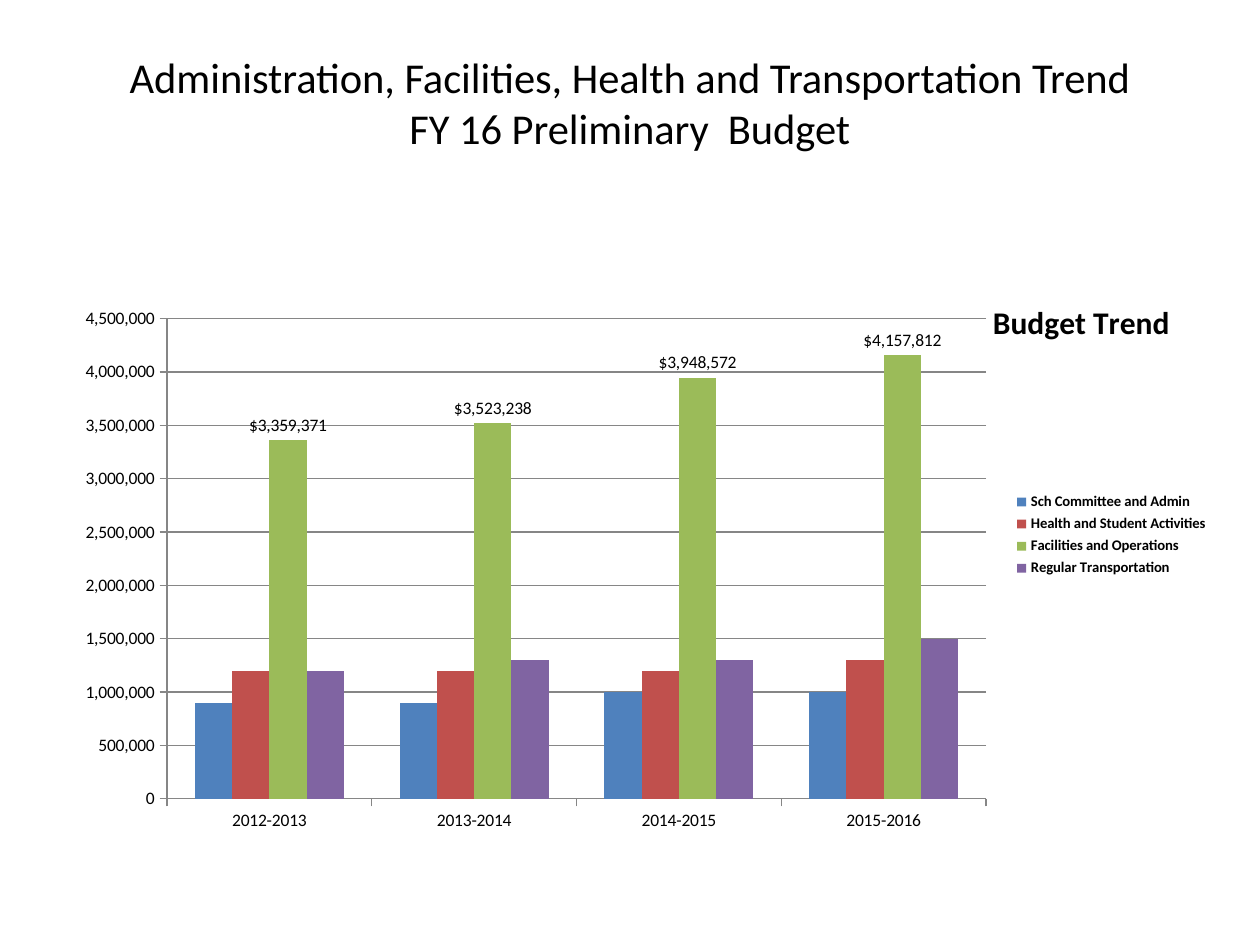
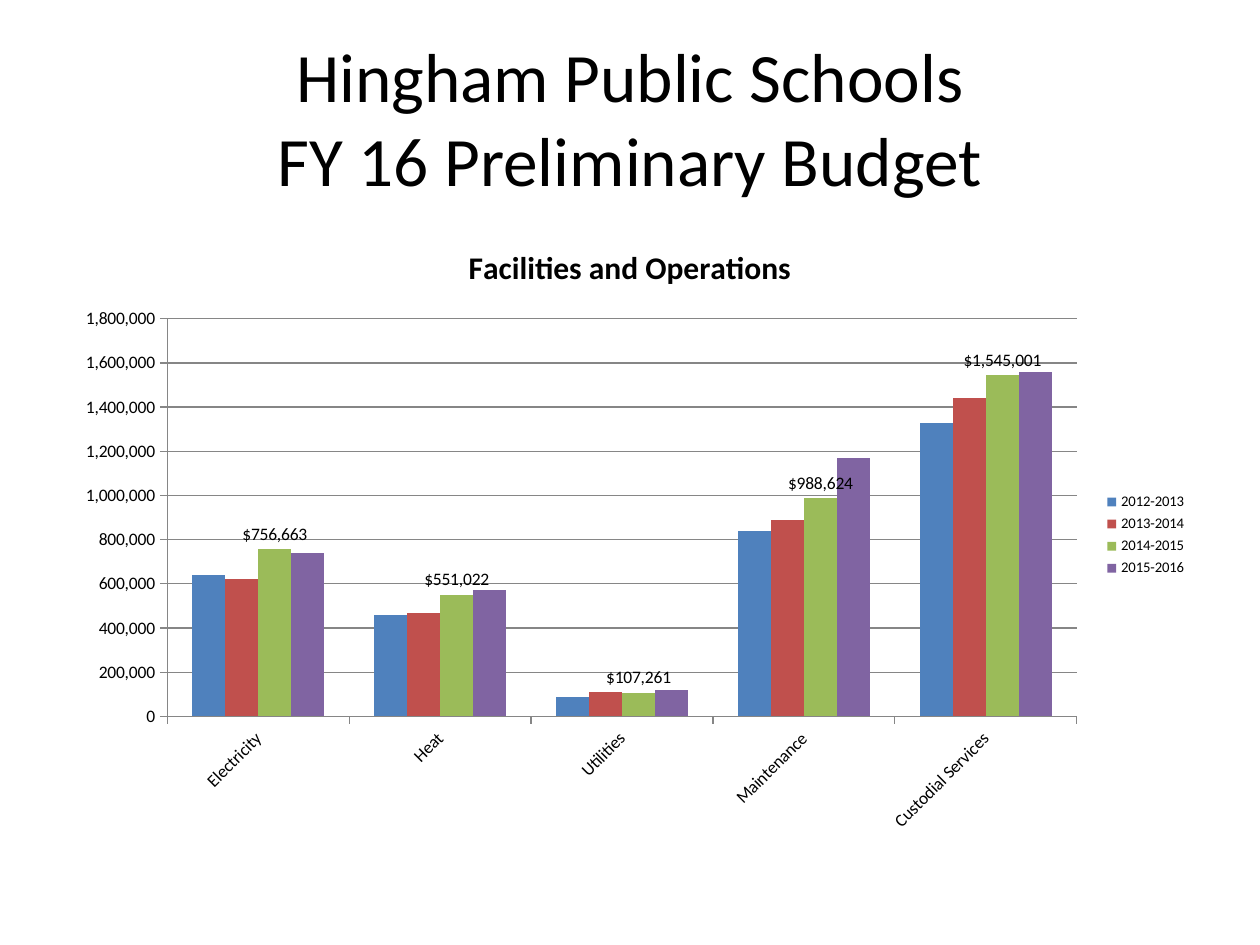
from lxml import etree
from pptx import Presentation
from pptx import util as u
from pptx.chart.data import CategoryChartData
from pptx.dml.color import RGBColor
from pptx.enum import chart as charts, text
from pptx.oxml import ns

FONT = "Calibri"
COLORS = {
    "text": "000000",
    "background": "FFFFFF",
    "line": "868686",
    "blue": "4F81BD",
    "red": "C0504D",
    "green": "9BBB59",
    "purple": "8064A2",
}
SERIES_COLORS = ("blue", "red", "green", "purple")
LABELLED_SERIES = 2
YEARS = ("2012-2013", "2013-2014", "2014-2015", "2015-2016")
TITLE_BOX = (0.05, 0.04, 0.9, 0.167)
CHART_TOP, CHART_HEIGHT = 0.233, 0.66

TREND = {
    "title": "Administration, Facilities, Health and Transportation Trend\vFY 16 Preliminary  Budget",
    "title_size": 24.3,
    "title_bottom": 0.29,
    "chart_width": 0.917,
    "chart_title": "Budget Trend",
    "chart_title_at": (0.8, 0.12),
    "categories": YEARS,
    "series": {
        "Sch Committee and Admin": (900000, 900000, 1000000, 1000000),
        "Health and Student Activities": (1200000, 1200000, 1200000, 1300000),
        "Facilities and Operations": (3359371, 3523238, 3948572, 4157812),
        "Regular Transportation": (1200000, 1300000, 1300000, 1500000),
    },
    "scale": (4500000, 500000),
    "plot_box": (0.09, 0.158, 0.709, 0.77),
    "legend_box": (0.82, 0.43, 0.175, 0.15),
    "legend_bold": True,
    "label_angle": 0,
}
FACILITIES = {
    "title": "Hingham Public Schools\vFY 16 Preliminary Budget",
    "title_size": 39.6,
    "title_bottom": 0.05,
    "chart_width": 0.9,
    "chart_title": "Facilities and Operations",
    "chart_title_at": None,
    "categories": ("Electricity", "Heat", "Utilities", "Maintenance", "Custodial Services"),
    "series": dict(zip(YEARS, (
        (640000, 460000, 90000, 840000, 1330000),
        (620000, 470000, 110000, 890000, 1440000),
        (756663, 551022, 107261, 988624, 1545001),
        (740000, 570000, 120000, 1170000, 1560000),
    ))),
    "scale": (1800000, 200000),
    "plot_box": (0.092, 0.158, 0.802, 0.638),
    "legend_box": (0.915, 0.43, 0.08, 0.15),
    "legend_bold": False,
    "label_angle": -45,
}


def color(name):
    return RGBColor.from_string(COLORS[name])


def set_font(font, size, bold=False):
    font.name = FONT
    font.size = u.Pt(size)
    font.bold = bold
    font.color.rgb = color("text")


def set_line(line):
    line.color.rgb = color("line")
    line.width = u.Pt(0.75)


def share_of_slide(presentation, box):
    width, height = presentation.slide_width, presentation.slide_height
    left, top, across, down = box
    return [int(length) for length in (left * width, top * height, across * width, down * height)]


def set_layout(element, index, box, inner=False):
    for layout in element.findall(ns.qn("c:layout")):
        element.remove(layout)
    layout = etree.Element(ns.qn("c:layout"))
    manual = etree.SubElement(layout, ns.qn("c:manualLayout"))
    settings = [("layoutTarget", "inner")] if inner else []
    settings += [("xMode", "edge"), ("yMode", "edge")]
    settings += zip("xywh", box)
    for name, value in settings:
        etree.SubElement(manual, ns.qn("c:" + name)).set("val", str(value))
    element.insert(index, layout)


def add_title(slide, box, content):
    frame = slide.shapes.add_textbox(*box).text_frame
    frame.word_wrap = True
    frame.vertical_anchor = text.MSO_ANCHOR.MIDDLE
    frame.margin_bottom = u.Inches(content["title_bottom"])
    paragraph = frame.paragraphs[0]
    paragraph.text = content["title"]
    paragraph.alignment = text.PP_ALIGN.CENTER
    set_font(paragraph.font, content["title_size"])


def style_chart_title(chart, content):
    chart.has_title = True
    title = chart.chart_title
    paragraph = title.text_frame.paragraphs[0]
    paragraph.text = content["chart_title"]
    set_font(paragraph.font, 18, True)
    if content["chart_title_at"]:
        set_layout(title._element, 1, content["chart_title_at"])
        title._element.find(ns.qn("c:overlay")).set("val", "1")


def style_axes(chart, content):
    for axis in (chart.category_axis, chart.value_axis):
        axis.major_tick_mark = charts.XL_TICK_MARK.OUTSIDE
        axis.minor_tick_mark = charts.XL_TICK_MARK.NONE
        set_font(axis.tick_labels.font, 10)
        set_line(axis.format.line)
    body = chart.category_axis._element.find(ns.qn("c:txPr")).find(ns.qn("a:bodyPr"))
    body.set("rot", str(content["label_angle"] * 60000))
    axis = chart.value_axis
    axis.minimum_scale = 0
    axis.maximum_scale, axis.major_unit = content["scale"]
    axis.has_major_gridlines = True
    set_line(axis.major_gridlines.format.line)
    axis.tick_labels.number_format = "#,##0"
    axis.tick_labels.number_format_is_linked = False


def style_columns(plot):
    plot.gap_width = 150
    plot.overlap = 0
    plot.vary_by_categories = False
    for series, name in zip(plot.series, SERIES_COLORS):
        series.format.fill.solid()
        series.format.fill.fore_color.rgb = color(name)
    labels = plot.series[LABELLED_SERIES].data_labels
    labels.show_value = True
    labels.number_format = "\\$#,##0"
    labels.number_format_is_linked = False
    labels.position = charts.XL_LABEL_POSITION.OUTSIDE_END
    set_font(labels.font, 10)


def style_legend(chart, content):
    chart.has_legend = True
    legend = chart.legend
    legend.position = charts.XL_LEGEND_POSITION.RIGHT
    legend.include_in_layout = False
    set_font(legend.font, 8.4, content["legend_bold"])
    set_layout(legend._element, 1, content["legend_box"])


def add_budget_chart(slide, box, content):
    data = CategoryChartData()
    data.categories = content["categories"]
    for name, values in content["series"].items():
        data.add_series(name, values)
    chart = slide.shapes.add_chart(charts.XL_CHART_TYPE.COLUMN_CLUSTERED, *box, data).chart
    set_font(chart.font, 10)
    style_chart_title(chart, content)
    style_axes(chart, content)
    style_columns(chart.plots[0])
    style_legend(chart, content)
    plot_area = chart.plots[0]._element.getparent()
    set_layout(plot_area, 0, content["plot_box"], inner=True)


def add_budget_slide(presentation, content):
    slide = presentation.slides.add_slide(presentation.slide_layouts[6])
    slide.background.fill.solid()
    slide.background.fill.fore_color.rgb = color("background")
    add_title(slide, share_of_slide(presentation, TITLE_BOX), content)
    chart_box = (TITLE_BOX[0], CHART_TOP, content["chart_width"], CHART_HEIGHT)
    add_budget_chart(slide, share_of_slide(presentation, chart_box), content)


def main():
    presentation = Presentation()
    presentation.slide_width = u.Inches(10)
    presentation.slide_height = u.Inches(7.5)
    for content in (TREND, FACILITIES):
        add_budget_slide(presentation, content)
    presentation.save("out.pptx")


if __name__ == "__main__":
    main()
